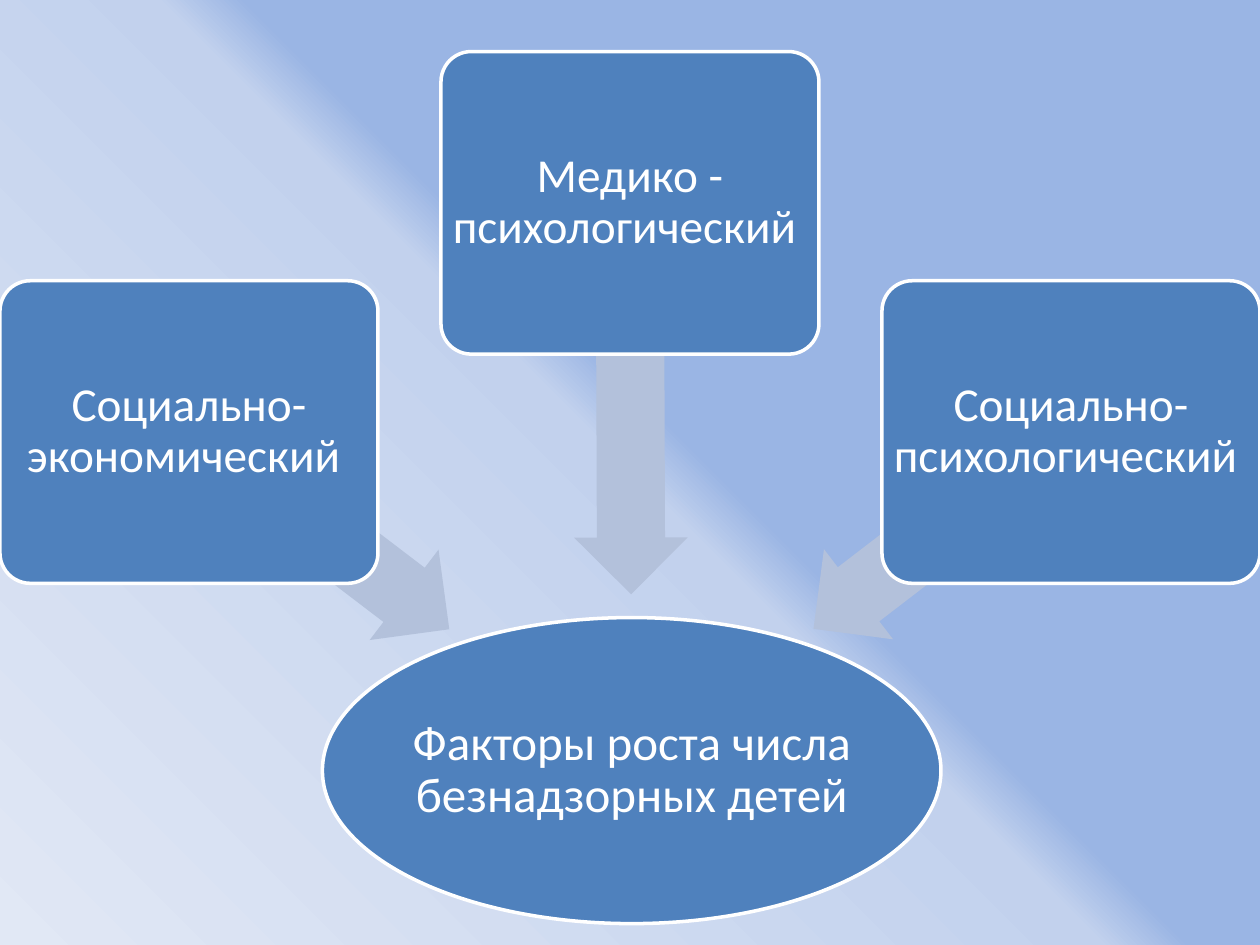
from copy import deepcopy

from pptx import Presentation
from pptx.dml.color import RGBColor
from pptx.enum.shapes import MSO_SHAPE
from pptx.enum.text import MSO_ANCHOR, PP_ALIGN
from pptx.util import Cm, Pt

COLORS = {
    "fill": "4F81BD",
    "line": "FFFFFF",
    "text": "FFFFFF",
    "arrow": "B3C1DB",
    "bg_blue": "9AB5E4",
    "bg_mid": "C2D1ED",
    "bg_light": "E1E8F5",
}
CARD_W, CARD_H, CARD_GAP = 7.62, 6.1, 1.27
ARROW_H = 2.29
FACTORS = [
    ("Социально- экономический ", 5.66, (6.44, 5.03, 6.58, 217.3)),
    ("Медико - психологический ", 1.04, (3.82, 6.99, 7.9, 269.8)),
    ("Социально- психологический ", 5.66, (1.21, 5.03, 6.53, 322.5)),
]


def rgb(name):
    return RGBColor.from_string(COLORS[name])


def set_attrs(obj, values):
    for name, value in values.items():
        setattr(obj, name, value)


def add_background(s):
    fill = s.background.fill
    fill.gradient()
    fill.gradient_angle = 225
    first = fill.gradient_stops[0]
    stops = fill._fill._gradFill.gsLst
    stops.insert(1, deepcopy(stops[0]))
    for stop, name, position in zip(
        fill.gradient_stops, ("bg_blue", "bg_mid", "bg_light"), (0.46, 0.5, 1)
    ):
        stop.color.rgb = rgb(name)
        stop.position = position


def add_block(s, kind, box, fill, line=None, adjustments=()):
    sp = s.shapes.add_shape(kind, *map(Cm, box))
    sp.shadow.inherit = False
    sp.fill.solid()
    sp.fill.fore_color.rgb = rgb(fill)
    if line:
        sp.line.color.rgb = rgb(line)
        sp.line.width = Pt(2)
    else:
        sp.line.fill.background()
    for i, value in enumerate(adjustments):
        sp.adjustments[i] = value
    return sp


def write_text(sp, text, size, margin):
    tf = sp.text_frame
    set_attrs(tf, {
        "word_wrap": True,
        "vertical_anchor": MSO_ANCHOR.MIDDLE,
        "margin_left": Cm(margin),
        "margin_right": Cm(margin),
        "margin_top": Cm(margin),
        "margin_bottom": Cm(margin),
    })
    p = tf.paragraphs[0]
    set_attrs(p, {"alignment": PP_ALIGN.CENTER, "line_spacing": 0.9})
    r = p.add_run()
    r.text = text
    set_attrs(r.font, {"name": "Calibri", "size": Pt(size)})
    r.font.color.rgb = rgb("text")


def add_factor(s, box, text, arrow):
    left, top, _, _ = box
    center_x, center_y, length, rotation = arrow
    arrow_box = (
        left + center_x - length / 2, top + center_y - ARROW_H / 2, length, ARROW_H
    )
    sp = add_block(s, MSO_SHAPE.LEFT_ARROW, arrow_box, "arrow", adjustments=(0.6, 0.5))
    sp.rotation = rotation
    card = add_block(s, MSO_SHAPE.ROUNDED_RECTANGLE, box, "fill", "line", (0.1,))
    write_text(card, text, 27, 0)


def add_outcome(s, box, text):
    add_block(s, MSO_SHAPE.OVAL, box, "fill", "line")
    label = s.shapes.add_textbox(*map(Cm, box))
    write_text(label, text, 28, 0.05)


def main():
    prs = Presentation()
    set_attrs(prs, {"slide_width": Cm(25.4), "slide_height": Cm(19.05)})
    s = prs.slides.add_slide(prs.slide_layouts[6])
    add_background(s)
    add_outcome(s, (6.5, 12.45, 12.47, 6.17), "Факторы роста числа безнадзорных детей")
    for i, (text, top, arrow) in enumerate(FACTORS):
        box = (i * (CARD_W + CARD_GAP), top, CARD_W, CARD_H)
        add_factor(s, box, text, arrow)
    prs.save("out.pptx")


if __name__ == "__main__":
    main()
